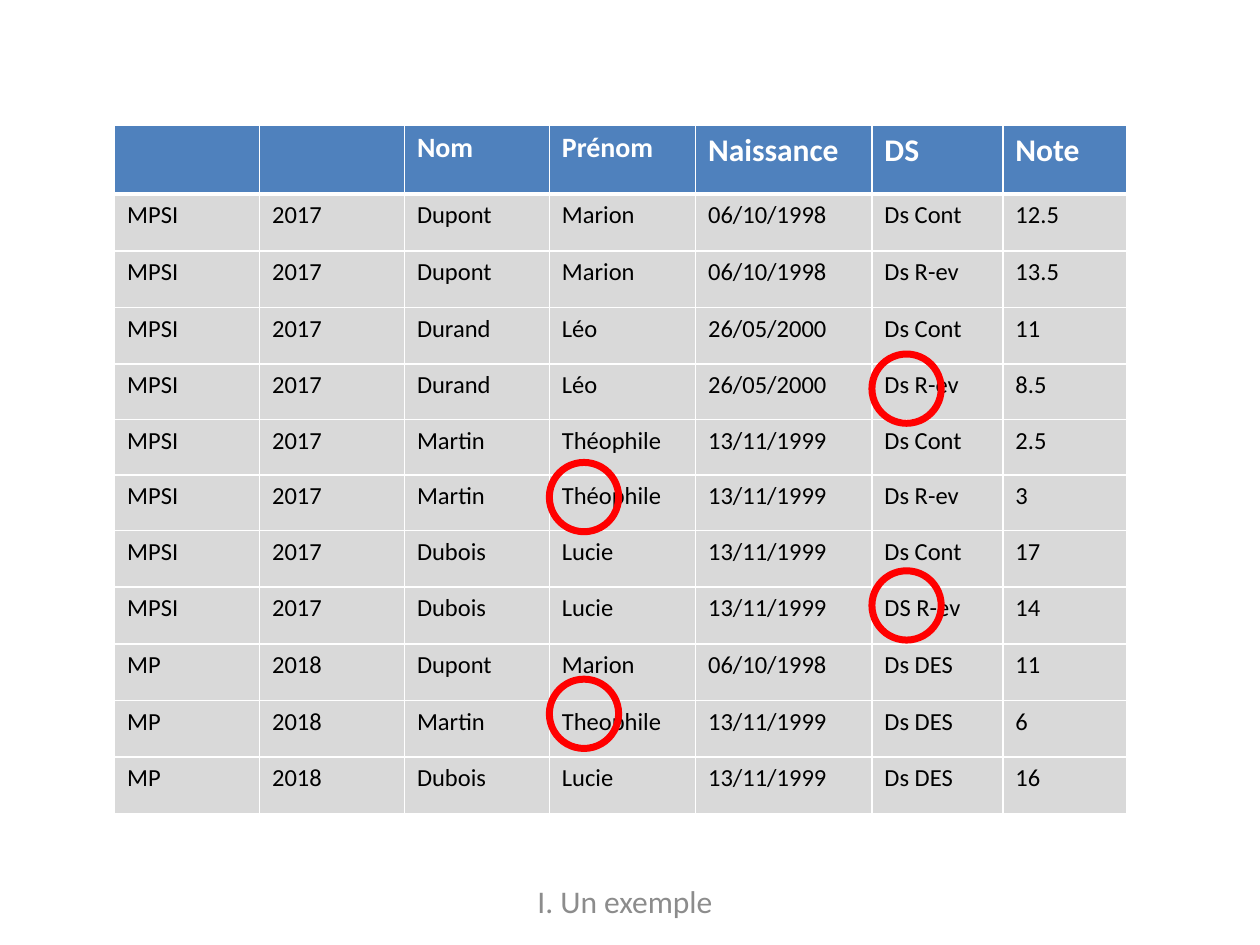
"""Build a slide with a table of exam marks and rings around the inconsistent entries."""
from lxml.etree import SubElement
from pptx import Presentation
from pptx.dml.color import RGBColor
from pptx.enum.shapes import MSO_SHAPE
from pptx.enum.text import MSO_ANCHOR, PP_ALIGN
from pptx.oxml.ns import qn
from pptx.util import Inches, Pt

COLORS = {"header": "4F81BD", "body": "D9D9D9", "white": "FFFFFF",
          "text": "000000", "footer": "8C8C8C", "ring": "FF0000"}
FOOTER = "I. Un exemple"
HEADER = ["", "", "Nom", "Prénom", "Naissance", "DS", "Note"]
HEADER_SIZES = [18, 18, 16, 16, 18, 18, 18]
MARKS = [
    ("MPSI", "2017", "Dupont", "Marion", "06/10/1998", "Ds Cont", "12.5"),
    ("MPSI", "2017", "Dupont", "Marion", "06/10/1998", "Ds R-ev", "13.5"),
    ("MPSI", "2017", "Durand", "Léo", "26/05/2000", "Ds Cont", "11"),
    ("MPSI", "2017", "Durand", "Léo", "26/05/2000", "Ds R-ev", "8.5"),
    ("MPSI", "2017", "Martin", "Théophile", "13/11/1999", "Ds Cont", "2.5"),
    ("MPSI", "2017", "Martin", "Théophile", "13/11/1999", "Ds R-ev", "3"),
    ("MPSI", "2017", "Dubois", "Lucie", "13/11/1999", "Ds Cont", "17"),
    ("MPSI", "2017", "Dubois", "Lucie", "13/11/1999", "DS R-ev", "14"),
    ("MP", "2018", "Dupont", "Marion", "06/10/1998", "Ds DES", "11"),
    ("MP", "2018", "Martin", "Theophile", "13/11/1999", "Ds DES", "6"),
    ("MP", "2018", "Dubois", "Lucie", "13/11/1999", "Ds DES", "16"),
]
LEFT, TOP = 0.91, 0.99
COLUMNS = [1.15, 1.15, 1.15, 1.16, 1.4, 1.04, 0.98]
ROWS = [0.55] + [0.45] * 3 + [0.44] * 3 + [0.45] * 5
RING_SIZE, RING_TOP, RING_STEP = 0.55, 2.81, 0.86
RING_COLUMNS = [5, 3, 5, 3]


def rgb(name):
    return RGBColor.from_string(COLORS[name])


def write(tf, text, size=14, color="text", bold=False, align=PP_ALIGN.LEFT):
    p = tf.paragraphs[0]
    p.alignment = align
    p.font.size = Pt(size)
    if text:
        r = p.add_run()
        r.text = text
        r.font.name, r.font.size, r.font.bold = "Calibri", Pt(size), bold
        r.font.color.rgb = rgb(color)


def border(cell, **widths):
    tc_pr = cell._tc.get_or_add_tcPr()
    for side, width in widths.items():
        ln = SubElement(tc_pr, qn(f"a:ln{side}"), w=str(Pt(width)))
        fill = SubElement(ln, qn("a:solidFill"))
        SubElement(fill, qn("a:srgbClr"), val=COLORS["white"])


def add_marks(slide):
    table = slide.shapes.add_table(
        len(ROWS), len(COLUMNS), Inches(LEFT), Inches(TOP),
        Inches(sum(COLUMNS)), Inches(sum(ROWS))).table
    for column, width in zip(table.columns, COLUMNS):
        column.width = Inches(width)
    for row, height in zip(table.rows, ROWS):
        row.height = Inches(height)
    for i, texts in enumerate([HEADER] + MARKS):
        for j, text in enumerate(texts):
            cell = table.cell(i, j)
            border(cell, L=1, R=1, T=3 if i == 1 else 1, B=3 if i == 0 else 1)
            cell.fill.solid()
            cell.fill.fore_color.rgb = rgb("body" if i else "header")
            if i:
                write(cell.text_frame, text)
            else:
                write(cell.text_frame, text, size=HEADER_SIZES[j], color="white", bold=True)


def add_rings(slide):
    for i, column in enumerate(RING_COLUMNS):
        s = slide.shapes.add_shape(
            MSO_SHAPE.OVAL, Inches(LEFT + sum(COLUMNS[:column])),
            Inches(RING_TOP + i * RING_STEP), Inches(RING_SIZE), Inches(RING_SIZE))
        s.shadow.inherit = False
        s.fill.background()
        s.line.color.rgb = rgb("ring")
        s.line.width = Pt(4)


def add_footer(slide):
    tf = slide.shapes.add_textbox(Inches(0.47), Inches(6.95), Inches(8.98), Inches(0.4)).text_frame
    tf.word_wrap = True
    tf.vertical_anchor = MSO_ANCHOR.MIDDLE
    write(tf, FOOTER, size=18, color="footer", align=PP_ALIGN.CENTER)


def main():
    prs = Presentation()
    prs.slide_width, prs.slide_height = Inches(10), Inches(7.5)
    slide = prs.slides.add_slide(prs.slide_layouts[6])
    add_footer(slide)
    add_marks(slide)
    add_rings(slide)
    prs.save("out.pptx")


if __name__ == "__main__":
    main()
